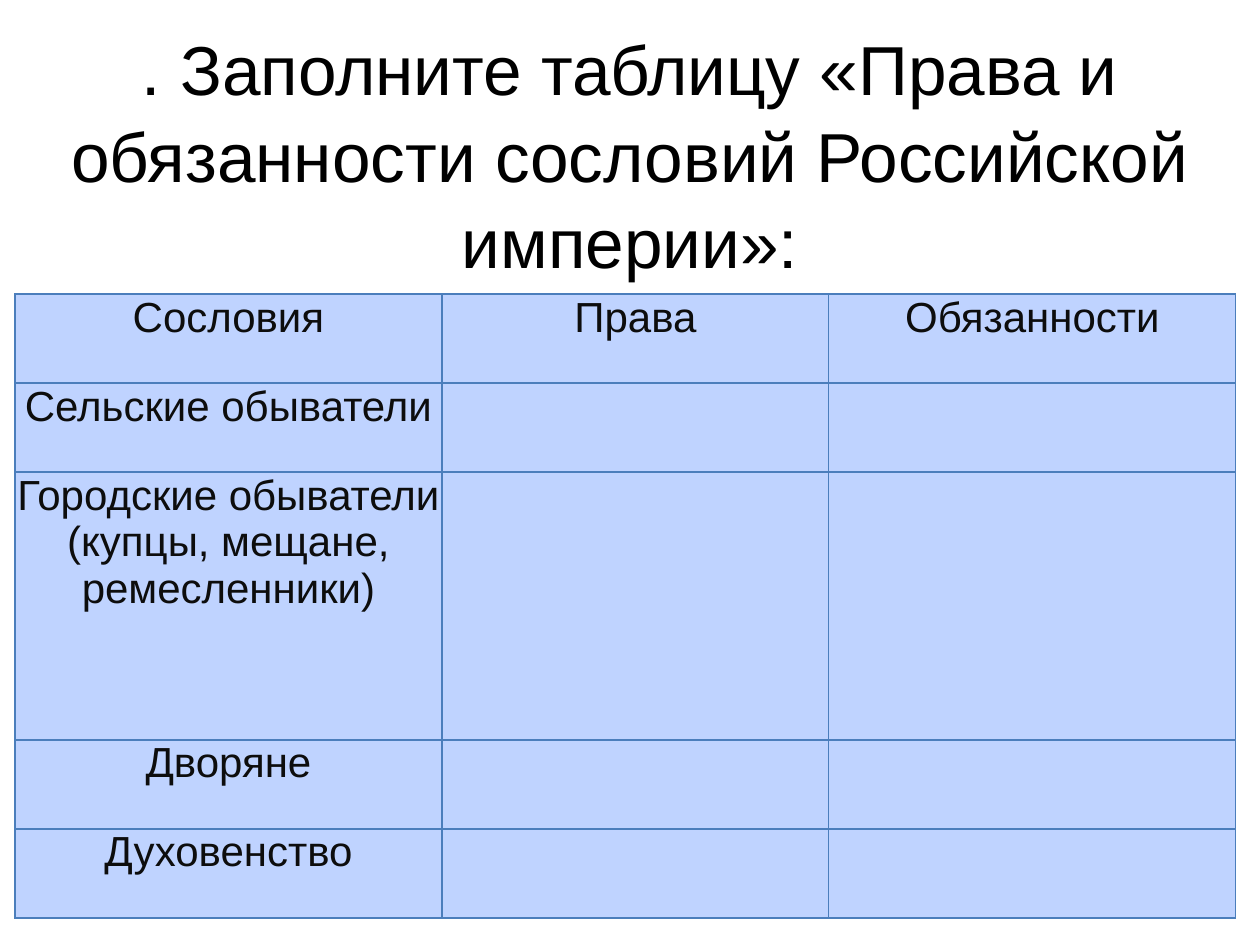
from lxml.etree import SubElement
from pptx import Presentation
from pptx.dml.color import RGBColor
from pptx.enum.text import MSO_ANCHOR, MSO_AUTO_SIZE, PP_ALIGN
from pptx.oxml.ns import qn
from pptx.util import Pt

PX = 914400 // 126
BLACK = RGBColor(0x00, 0x00, 0x00)
CELL_TEXT = RGBColor(0x0D, 0x0D, 0x0D)
CELL_FILL = RGBColor(0xBF, 0xD3, 0xFF)
BORDER = RGBColor(0x4B, 0x7E, 0xBC)

HEADINGS = ["Сословия", "Права", "Обязанности"]
ESTATES = [
    "Сельские обыватели",
    "Городские обыватели (купцы, мещане, ремесленники)",
    "Дворяне",
    "Духовенство",
]
COLUMN_WIDTHS = [427, 387, 407]
ROW_HEIGHTS = [89, 89, 268, 89, 89]


def add_borders(cell):
    properties = cell._tc.get_or_add_tcPr()
    for position, side in enumerate(("lnL", "lnR", "lnT", "lnB")):
        line = SubElement(properties, qn(f"a:{side}"), w=str(Pt(0.75)))
        fill = SubElement(line, qn("a:solidFill"))
        SubElement(fill, qn("a:srgbClr"), val=str(BORDER))
        properties.insert(position, line)


def format_text(paragraph, size, color):
    paragraph.alignment = PP_ALIGN.CENTER
    for run in paragraph.runs:
        run.font.name = "Arial"
        run.font.size = Pt(size)
        run.font.color.rgb = color


presentation = Presentation()
presentation.slide_width = 1260 * PX
presentation.slide_height = 945 * PX
slide = presentation.slides.add_slide(presentation.slide_layouts[0])
subtitle = slide.placeholders[1]
subtitle.element.getparent().remove(subtitle.element)

# Title
title = slide.shapes.title
title.left, title.top, title.width, title.height = 15 * PX, 37 * PX, 1230 * PX, 232 * PX
title.text_frame.text = ". Заполните таблицу «Права и обязанности сословий Российской империи»:"
title.text_frame.word_wrap = True
title.text_frame.auto_size = MSO_AUTO_SIZE.NONE
title.text_frame.vertical_anchor = MSO_ANCHOR.MIDDLE
title.text_frame.paragraphs[0].line_spacing = 1.04
format_text(title.text_frame.paragraphs[0], 39.6, BLACK)

# Table of estates, with rights and duties left to fill in
rows = [HEADINGS] + [[estate, "", ""] for estate in ESTATES]
estates_table = slide.shapes.add_table(
    len(rows), len(HEADINGS), 15 * PX, 294 * PX,
    sum(COLUMN_WIDTHS) * PX, sum(ROW_HEIGHTS) * PX,
).table
for column, width in zip(estates_table.columns, COLUMN_WIDTHS):
    column.width = width * PX
for row, height, texts in zip(estates_table.rows, ROW_HEIGHTS, rows):
    row.height = height * PX
    for cell, text in zip(row.cells, texts):
        cell.margin_left = cell.margin_right = cell.margin_top = cell.margin_bottom = 0
        cell.fill.solid()
        cell.fill.fore_color.rgb = CELL_FILL
        add_borders(cell)
        if text:
            cell.text_frame.text = text
            format_text(cell.text_frame.paragraphs[0], 24, CELL_TEXT)
            cell.text_frame.paragraphs[0].runs[0].font.bold = False

presentation.save("out.pptx")
